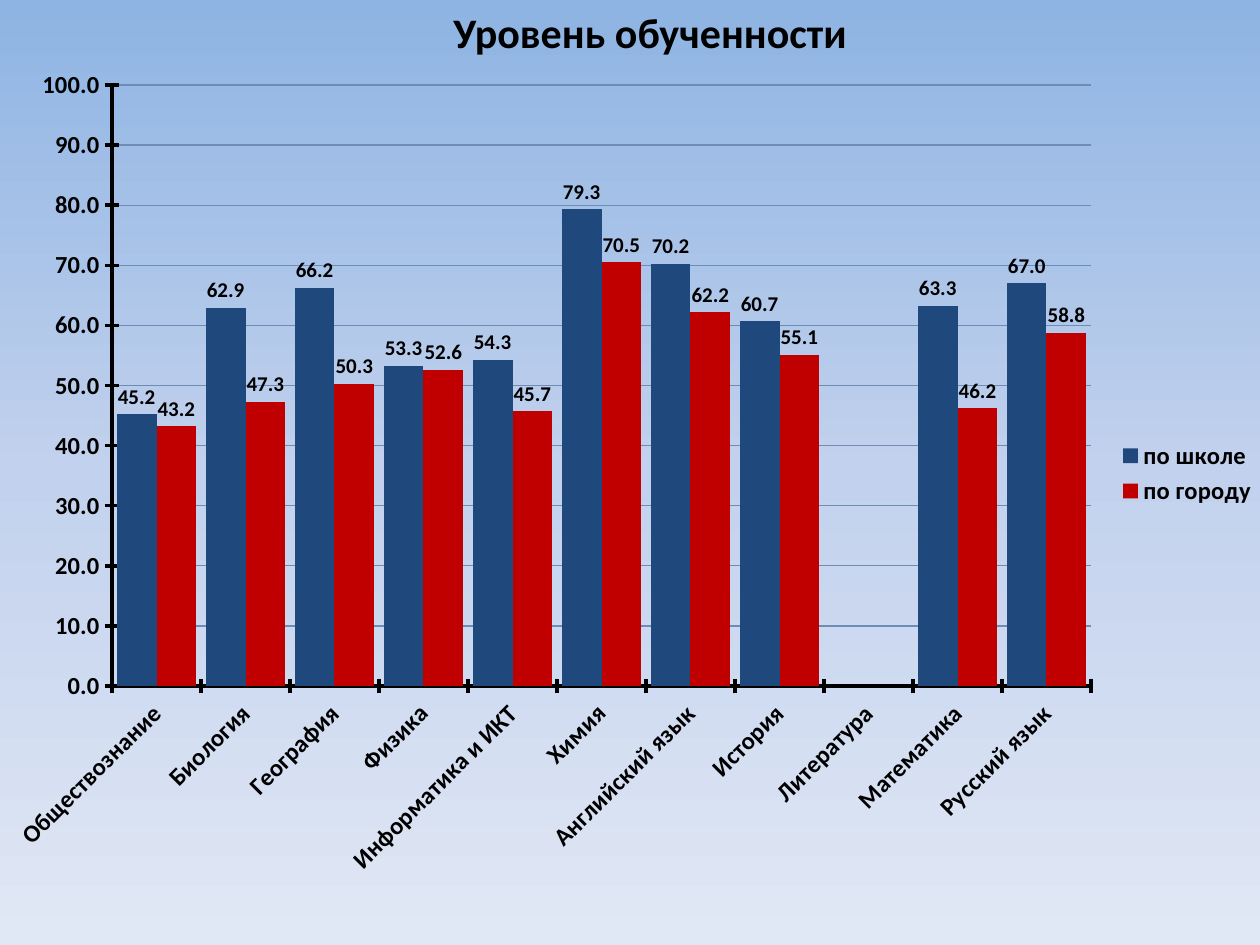
from copy import deepcopy

from lxml import etree
from pptx import Presentation
from pptx.chart.data import CategoryChartData
from pptx.dml.color import RGBColor
from pptx.enum import chart as charts, text
from pptx.oxml.ns import qn
from pptx.util import Pt

BLACK = RGBColor(0x00, 0x00, 0x00)
SKY_TOP = RGBColor(0x8E, 0xB4, 0xE3)
SKY_MIDDLE = RGBColor(0xC2, 0xD1, 0xED)
SKY_BOTTOM = RGBColor(0xE1, 0xE8, 0xF5)
SCHOOL_BLUE = RGBColor(0x1F, 0x49, 0x7D)
CITY_RED = RGBColor(0xC0, 0x00, 0x00)
GRID_BLUE = RGBColor(0x6E, 0x8D, 0xB5)
FONT = "Calibri"

SUBJECTS = [
    "Обществознание", "Биология", "География", "Физика", "Информатика и ИКТ", "Химия",
    "Английский язык", "История", "Литература", "Математика", "Русский язык",
]
RESULTS = [
    ("по школе", SCHOOL_BLUE,
     [45.2, 62.9, 66.2, 53.3, 54.3, 79.3, 70.2, 60.7, None, 63.3, 67.0]),
    ("по городу", CITY_RED,
     [43.2, 47.3, 50.3, 52.6, 45.7, 70.5, 62.2, 55.1, None, 46.2, 58.8]),
]


def style_font(font, size, bold=True):
    font.name = FONT
    font.size = Pt(size)
    font.bold = bold
    font.color.rgb = BLACK


presentation = Presentation()
presentation.slide_width = Pt(720)
presentation.slide_height = Pt(540)
slide = presentation.slides.add_slide(presentation.slide_layouts[6])

background = slide.background.fill
background.gradient()
background.gradient_angle = 270
first_stop = background.gradient_stops[0]._gs
first_stop.addnext(deepcopy(first_stop))
sky = zip(background.gradient_stops, (SKY_TOP, SKY_MIDDLE, SKY_BOTTOM), (0, 0.5, 1))
for stop, color, position in sky:
    stop.color.rgb = color
    stop.position = position

title = slide.shapes.add_textbox(Pt(252), Pt(0), Pt(242), Pt(36))
title.text_frame.word_wrap = False
title.text_frame.auto_size = text.MSO_AUTO_SIZE.SHAPE_TO_FIT_TEXT
paragraph = title.text_frame.paragraphs[0]
paragraph.text = "Уровень обученности"
style_font(paragraph.font, 24)

chart_data = CategoryChartData(number_format="0.0")
chart_data.categories = SUBJECTS
for name, color, values in RESULTS:
    chart_data.add_series(name, values)

chart_width, chart_height = 732, 479
chart = slide.shapes.add_chart(
    charts.XL_CHART_TYPE.COLUMN_CLUSTERED,
    Pt(-6.5), Pt(31), Pt(chart_width), Pt(chart_height), chart_data,
).chart
chart.has_title = False
style_font(chart.font, 10, bold=False)

chart.has_legend = True
chart.legend.position = charts.XL_LEGEND_POSITION.RIGHT
chart.legend.include_in_layout = False
style_font(chart.legend.font, 14)

for axis in (chart.category_axis, chart.value_axis):
    axis.major_tick_mark = charts.XL_TICK_MARK.CROSS
    axis.minor_tick_mark = charts.XL_TICK_MARK.NONE
    axis.format.line.color.rgb = BLACK
    axis.format.line.width = Pt(2)
    style_font(axis.tick_labels.font, 14)

category_text = chart.category_axis._element.find(qn("c:txPr"))
category_text.find(qn("a:bodyPr")).set("rot", "-2700000")

value_axis = chart.value_axis
value_axis.minimum_scale = 0
value_axis.maximum_scale = 100
value_axis.major_unit = 10
value_axis.tick_labels.number_format = "0.0"
value_axis.tick_labels.number_format_is_linked = False
value_axis.has_major_gridlines = True
value_axis.major_gridlines.format.line.color.rgb = GRID_BLUE
value_axis.major_gridlines.format.line.width = Pt(0.75)

plot = chart.plots[0]
plot.gap_width = 24
plot.overlap = 0
plot.vary_by_categories = False
for series, (name, color, values) in zip(plot.series, RESULTS):
    series.format.fill.solid()
    series.format.fill.fore_color.rgb = color
    series.invert_if_negative = False
    labels = series.data_labels
    labels.show_value = True
    labels.number_format = "0.0"
    labels.number_format_is_linked = False
    labels.position = charts.XL_LABEL_POSITION.OUTSIDE_END
    style_font(labels.font, 12)

plot_area = chart._chartSpace.chart.plotArea
for old_layout in plot_area.findall(qn("c:layout")):
    plot_area.remove(old_layout)
layout = etree.Element(qn("c:layout"))
plot_area.insert(0, layout)
manual_layout = etree.SubElement(layout, qn("c:manualLayout"))
for tag, value in (
    ("layoutTarget", "inner"), ("xMode", "edge"), ("yMode", "edge"),
    ("x", 70.5 / chart_width), ("y", 17.6 / chart_height),
    ("w", 559.5 / chart_width), ("h", 343.5 / chart_height),
):
    etree.SubElement(manual_layout, qn(f"c:{tag}")).set("val", str(value))

presentation.save("out.pptx")
